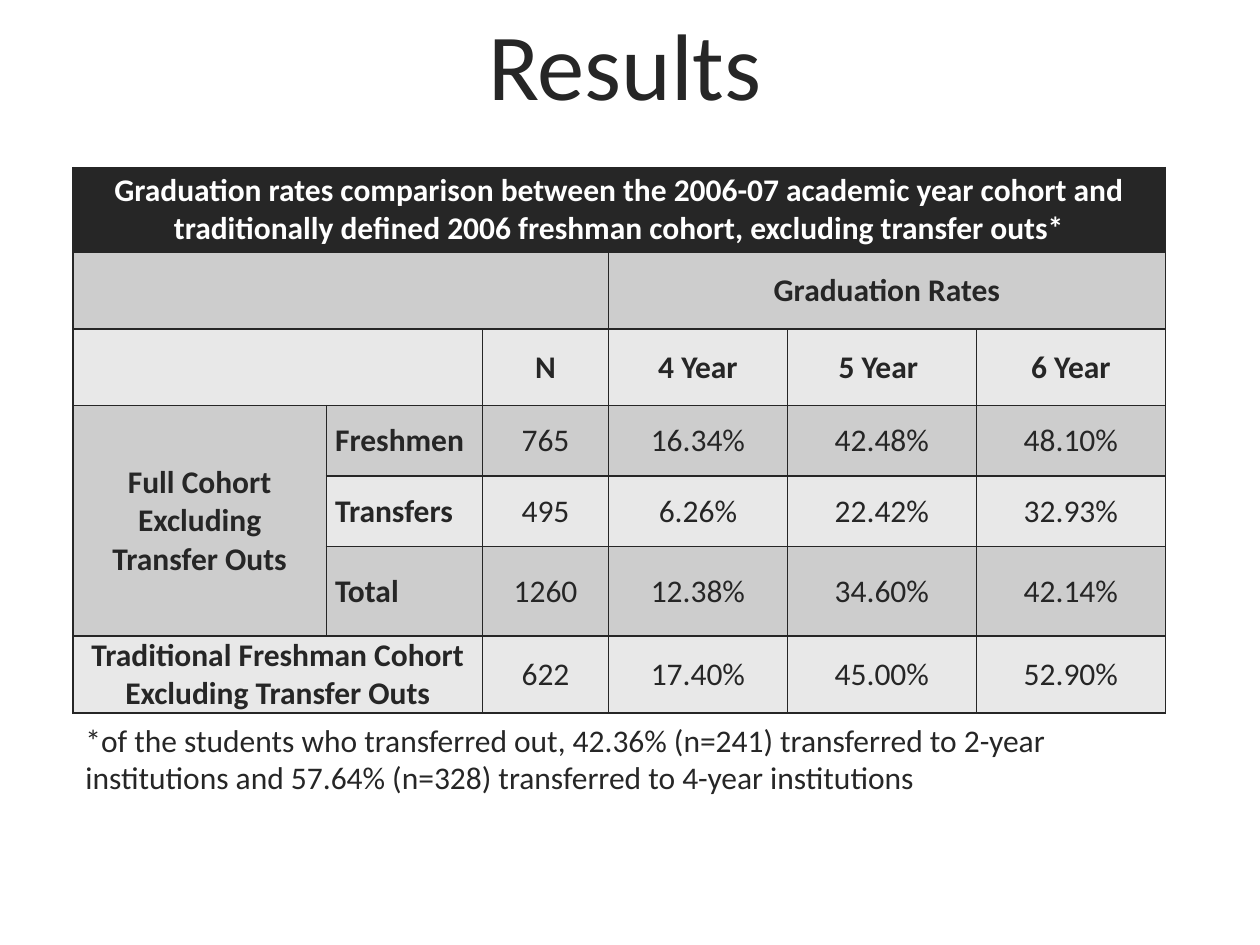
from pptx import Presentation
from pptx.dml.color import RGBColor
from pptx.enum.text import MSO_ANCHOR, MSO_AUTO_SIZE, PP_ALIGN
from pptx.oxml import parse_xml
from pptx.oxml.ns import nsdecls
from pptx.util import Inches, Pt

LEFT, CENTER = PP_ALIGN.LEFT, PP_ALIGN.CENTER
MIDDLE = MSO_ANCHOR.MIDDLE
GROW = MSO_AUTO_SIZE.SHAPE_TO_FIT_TEXT
DARK, WHITE, GRAY, PALE = "262626", "FFFFFF", "CDCDCD", "E8E8E8"


def color(code):
    return RGBColor.from_string(code)


def write(frame, text, size, align, ink=DARK, bold=False):
    para = frame.paragraphs[0]
    para.alignment = align
    run = para.add_run()
    run.text = text
    run.font.name = "Calibri"
    run.font.size = Pt(size)
    run.font.bold = bold
    run.font.color.rgb = color(ink)


deck = Presentation()
deck.slide_width, deck.slide_height = Inches(10), Inches(7.5)
slide = deck.slides.add_slide(deck.slide_layouts[6])

widths = [2.01, 1.24, 1, 1.42, 1.5, 1.5]
heights = [0.67, 0.61, 0.61, 0.56, 0.56, 0.71, 0.61]
rows = [
    ["Graduation rates comparison between the 2006-07 academic year cohort and "
     "traditionally defined 2006 freshman cohort, excluding transfer outs*",
     "", "", "", "", ""],
    ["", "", "", "Graduation Rates", "", ""],
    ["", "", "N", "4 Year", "5 Year ", "6 Year"],
    ["Full Cohort Excluding Transfer Outs", "Freshmen", "765", "16.34%", "42.48%", "48.10%"],
    ["", "Transfers", "495", "6.26%", "22.42%", "32.93%"],
    ["", "Total", "1260", "12.38%", "34.60%", "42.14%"],
    ["Traditional Freshman Cohort Excluding Transfer Outs", "", "622", "17.40%", "45.00%", "52.90%"],
]
spans = [(0, 0, 0, 5), (1, 0, 1, 2), (1, 3, 1, 5), (2, 0, 2, 1), (3, 0, 5, 0), (6, 0, 6, 1)]

table = slide.shapes.add_table(
    len(rows), len(widths), Inches(0.58), Inches(1.33),
    Inches(sum(widths)), Inches(sum(heights))).table
table.first_row = False
table.horz_banding = False
for col, width in zip(table.columns, widths):
    col.width = Inches(width)
for row, height in zip(table.rows, heights):
    row.height = Inches(height)
for top, left, low, right in spans:
    table.cell(top, left).merge(table.cell(low, right))

for r, row in enumerate(rows):
    shade = DARK if r == 0 else GRAY if r % 2 else PALE
    for c, text in enumerate(row):
        cell = table.cell(r, c)
        cell.vertical_anchor = MIDDLE
        cell.margin_left = cell.margin_right = Inches(0.07)
        cell.margin_top = cell.margin_bottom = 0
        for side in "LRTB":
            cell._tc.get_or_add_tcPr().append(parse_xml(
                f'<a:ln{side} {nsdecls("a")} w="12700"><a:solidFill>'
                f'<a:srgbClr val="{DARK}"/></a:solidFill></a:ln{side}>'))
        cell.fill.solid()
        cell.fill.fore_color.rgb = color(shade)
        if text:
            write(cell.text_frame, text, 18,
                  LEFT if c == 1 else CENTER,
                  DARK if r else WHITE, r < 3 or c < 2)

note = ("*of the students who transferred out, 42.36% (n=241) transferred to 2-year "
        "institutions and 57.64% (n=328) transferred to 4-year institutions")
for x, y, w, h, text, size, align in [
    (0.67, 0, 8.58, 1.01, "Results", 54, CENTER),
    (0.58, 5.67, 8.67, 0.71, note, 18, LEFT),
]:
    frame = slide.shapes.add_textbox(Inches(x), Inches(y), Inches(w), Inches(h)).text_frame
    frame.word_wrap = True
    frame.auto_size = GROW
    write(frame, text, size, align)

deck.save("out.pptx")
